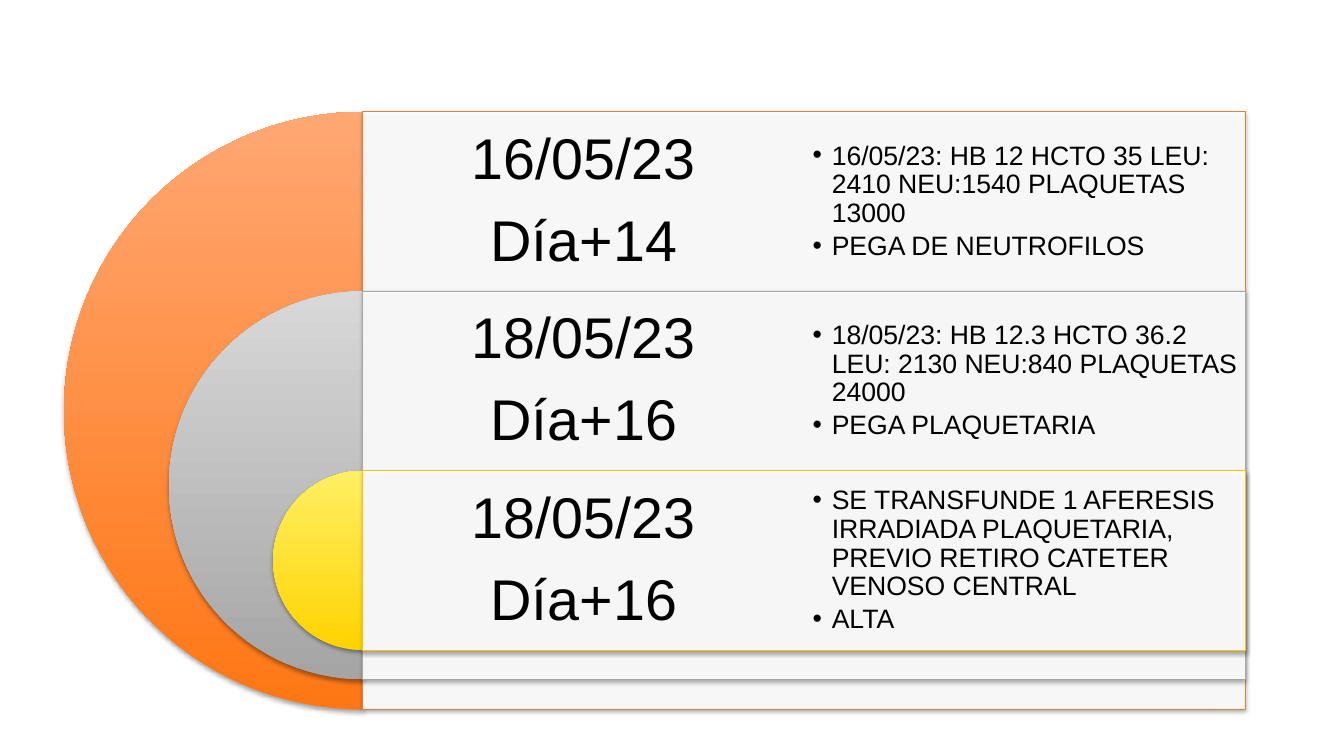
from dataclasses import dataclass

from pptx import Presentation
from pptx.dml.color import RGBColor
from pptx.enum.shapes import MSO_SHAPE
from pptx.enum.text import MSO_ANCHOR, MSO_AUTO_SIZE, PP_ALIGN
from pptx.oxml import parse_xml
from pptx.oxml.ns import nsdecls, qn
from pptx.shapes.autoshape import Shape
from pptx.slide import Slide
from pptx.text.text import TextFrame
from pptx.util import Inches, Pt


@dataclass(frozen=True)
class Theme:
    font: str = "Arial"
    ink: str = "000000"
    panel: str = "FFFFFF"
    panel_opacity: int = 90
    date_size: int = 41
    finding_size: int = 19
    line_spacing: float = 0.9


@dataclass(frozen=True)
class Stage:
    date: str
    day: str
    findings: tuple[str, ...]
    diameter: float
    bottom_color: str
    top_color: str
    outline: str


THEME = Theme()
STAGES = (
    Stage("16/05/23", "Día+14",
          ("16/05/23: HB 12 HCTO 35 LEU: 2410 NEU:1540 PLAQUETAS 13000",
           "PEGA DE NEUTROFILOS"),
          5.93, "FF7714", "FFA773", "ED7D31"),
    Stage("18/05/23", "Día+16",
          ("18/05/23: HB 12.3 HCTO 36.2 LEU: 2130 NEU:840 PLAQUETAS 24000",
           "PEGA PLAQUETARIA"),
          3.85, "A5A5A5", "D8D8D8", "A5A5A5"),
    Stage("18/05/23", "Día+16",
          ("SE TRANSFUNDE 1 AFERESIS IRRADIADA PLAQUETARIA, "
           "PREVIO RETIRO CATETER VENOSO CENTRAL",
           "ALTA"),
          1.78, "FFD300", "FFEF63", "FFC000"),
)

# Layout: the half discs end where the panels begin
PANEL_LEFT, FIRST_TOP = 3.6, 1.11
COLUMN_WIDTH, ROW_HEIGHT = 4.38, 1.78
PANEL_WIDTH = 8.75


def add_shadow(shape: Shape) -> None:
    shape.shadow.inherit = False
    effects = shape._element.spPr.find(qn("a:effectLst"))
    effects.append(parse_xml(
        f'<a:outerShdw {nsdecls("a")} blurRad="{Pt(3.1)}" dist="{Pt(1.8)}" '
        'dir="5400000" rotWithShape="0"><a:srgbClr val="000000">'
        '<a:alpha val="35000"/></a:srgbClr></a:outerShdw>'))


def add_half_disc(slide: Slide, stage: Stage, top: float) -> None:
    size = Inches(stage.diameter)
    disc = slide.shapes.add_shape(
        MSO_SHAPE.PIE, Inches(PANEL_LEFT - stage.diameter / 2), Inches(top), size, size)
    disc.adjustments[0], disc.adjustments[1] = 54, 162
    disc.fill.gradient()
    disc.fill.gradient_angle = 90
    for stop, color in zip(disc.fill.gradient_stops, (stage.bottom_color, stage.top_color)):
        stop.color.rgb = RGBColor.from_string(color)
    disc.line.fill.background()
    add_shadow(disc)


def add_panel(slide: Slide, stage: Stage, top: float) -> None:
    panel = slide.shapes.add_shape(
        MSO_SHAPE.RECTANGLE, Inches(PANEL_LEFT), Inches(top),
        Inches(PANEL_WIDTH), Inches(stage.diameter))
    panel.fill.solid()
    panel.fill.fore_color.rgb = RGBColor.from_string(THEME.panel)
    color = panel._element.spPr.find(qn("a:solidFill")).find(qn("a:srgbClr"))
    color.append(parse_xml(
        f'<a:alpha {nsdecls("a")} val="{THEME.panel_opacity * 1000}"/>'))
    panel.line.color.rgb = RGBColor.from_string(stage.outline)
    panel.line.width = Pt(0.75)
    add_shadow(panel)


def fill_text(frame: TextFrame, lines: tuple[str, ...], size: int, gap: float,
              inset: float, align: PP_ALIGN, bulleted: bool = False) -> None:
    frame.text = "\n".join(lines)
    frame.word_wrap = True
    frame.auto_size = MSO_AUTO_SIZE.NONE
    frame.vertical_anchor = MSO_ANCHOR.MIDDLE
    frame.margin_left = frame.margin_right = Inches(inset)
    frame.margin_top = frame.margin_bottom = Inches(inset)
    for index, paragraph in enumerate(frame.paragraphs):
        if bulleted:
            add_bullet(paragraph)
        paragraph.alignment = align
        paragraph.line_spacing = THEME.line_spacing
        paragraph.space_before = Pt(gap if index else 0)
        for run in paragraph.runs:
            run.font.name = THEME.font
            run.font.size = Pt(size)
            run.font.bold = False
            run.font.color.rgb = RGBColor.from_string(THEME.ink)


def add_bullet(paragraph) -> None:
    paragraph.level = 1
    properties = paragraph._p.get_or_add_pPr()
    properties.set("marL", str(Inches(0.19)))
    properties.set("indent", str(Inches(-0.19)))
    for bullet_part in (
        f'<a:buClr {nsdecls("a")}><a:srgbClr val="{THEME.ink}"/></a:buClr>',
        f'<a:buFont {nsdecls("a")} typeface="{THEME.font}"/>',
        f'<a:buChar {nsdecls("a")} char="•"/>',
    ):
        properties.append(parse_xml(bullet_part))


def add_date(slide: Slide, stage: Stage, top: float) -> None:
    date = slide.shapes.add_textbox(
        Inches(PANEL_LEFT), Inches(top), Inches(COLUMN_WIDTH), Inches(ROW_HEIGHT))
    fill_text(date.text_frame, (stage.date, stage.day), THEME.date_size,
              14.3, 0.17, PP_ALIGN.CENTER)


def place_findings(findings: Shape, stage: Stage, top: float) -> None:
    findings.left, findings.top = Inches(PANEL_LEFT + COLUMN_WIDTH), Inches(top)
    findings.width, findings.height = Inches(COLUMN_WIDTH), Inches(ROW_HEIGHT)
    fill_text(findings.text_frame, stage.findings, THEME.finding_size,
              2.9, 0.08, PP_ALIGN.LEFT, bulleted=True)
    # Bring the list in front of the panels
    findings._element.getparent().append(findings._element)


def main() -> None:
    deck = Presentation()
    deck.slide_width, deck.slide_height = Inches(13.33), Inches(7.5)
    # The comparison layout offers a body placeholder for each list
    slide = deck.slides.add_slide(deck.slide_layouts[4])
    title, *bodies = slide.placeholders
    for unused in (title, *bodies[len(STAGES):]):
        unused._element.getparent().remove(unused._element)

    # One row per stage
    for row, (stage, findings) in enumerate(zip(STAGES, bodies)):
        top = FIRST_TOP + row * ROW_HEIGHT
        add_half_disc(slide, stage, top)
        add_panel(slide, stage, top)
        add_date(slide, stage, top)
        place_findings(findings, stage, top)

    deck.save("out.pptx")


if __name__ == "__main__":
    main()
